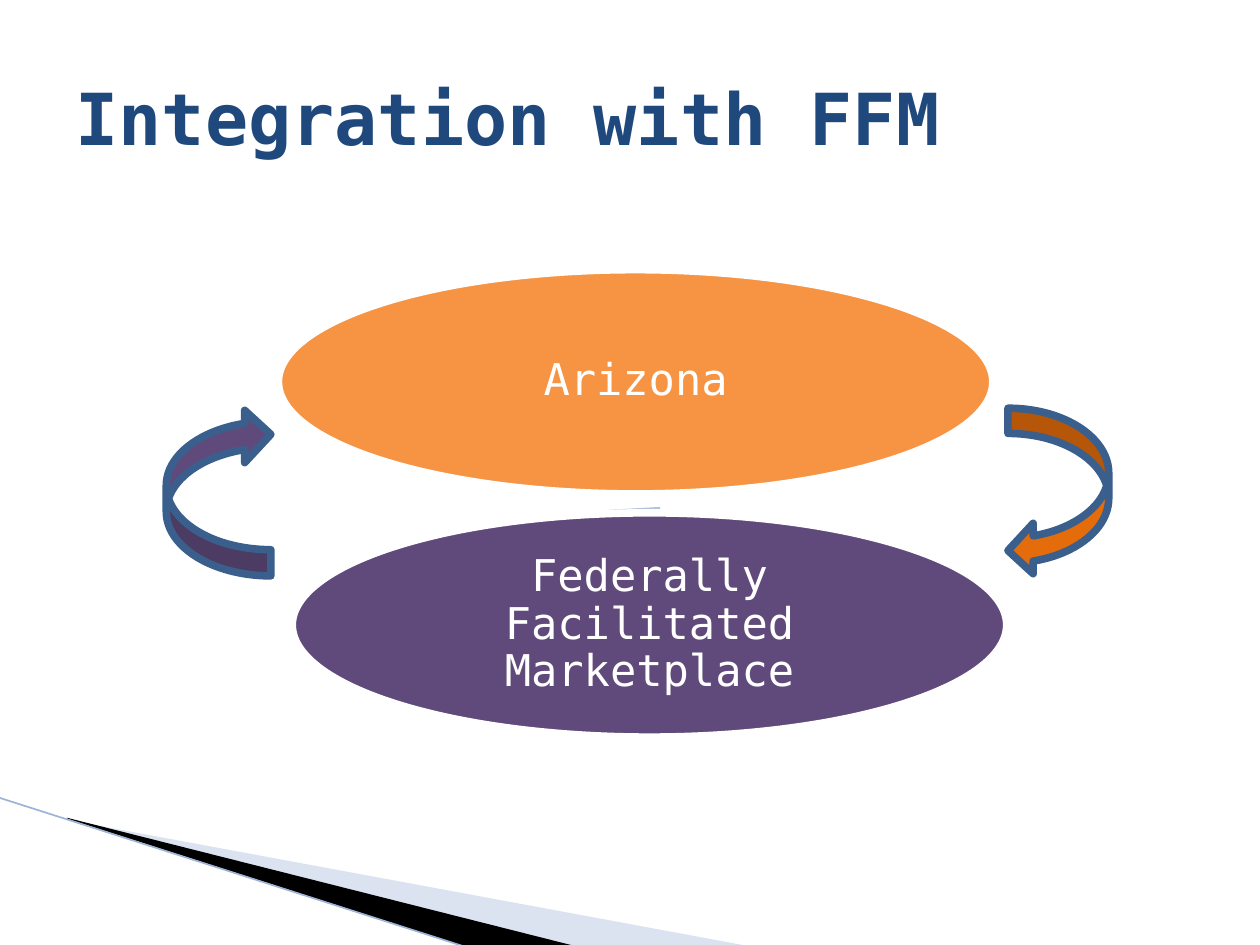
"""Build the slide showing the exchange between Arizona and the federal marketplace."""
from dataclasses import dataclass

from lxml import etree
from pptx import Presentation
from pptx.dml.color import RGBColor
from pptx.enum import shapes, text
from pptx.oxml import ns
from pptx.util import Inches, Pt

FONT = "DejaVu Sans Mono"
NAVY = RGBColor(0x1F, 0x49, 0x7D)
WHITE = RGBColor(0xFF, 0xFF, 0xFF)
BLACK = RGBColor(0x00, 0x00, 0x00)
ORANGE = RGBColor(0xF7, 0x94, 0x43)
DEEP_ORANGE = RGBColor(0xE4, 0x6C, 0x0A)
PURPLE = RGBColor(0x60, 0x4A, 0x7B)
OUTLINE = RGBColor(0x3A, 0x5F, 0x8C)
PALE_BLUE = RGBColor(0xA7, 0xB9, 0xDB)
LINK_BLUE = RGBColor(0xB3, 0xC1, 0xDB)
LINE_BLUE = RGBColor(0x9E, 0xB3, 0xD6)


@dataclass(frozen=True)
class Item:
    kind: shapes.MSO_SHAPE
    box: tuple[float, float, float, float]
    fill: RGBColor
    outline: RGBColor | None = None
    label: str = ""
    rotation: float = 0
    flips: tuple[str, ...] = ()
    adjustments: tuple[float, ...] = ()


@dataclass(frozen=True)
class Wedge:
    points: tuple[tuple[float, float], ...]
    fill: RGBColor
    opacity: int = 100


WEDGES = (
    Wedge(((0.55, 6.51), (5.95, 7.51), (4.56, 7.51), (0.55, 6.5)), PALE_BLUE, 40),
    Wedge(((0.53, 6.49), (4.57, 7.51), (3.72, 7.52), (0.54, 6.5)), BLACK),
)
ITEMS = (
    Item(shapes.MSO_SHAPE.OVAL, (2.21, 2.14, 5.67, 1.78), ORANGE, WHITE, "Arizona"),
    Item(shapes.MSO_SHAPE.RIGHT_ARROW, (5, 3.74, 0.08, 0.67), LINK_BLUE,
         rotation=266.8, flips=("flipH", "flipV"), adjustments=(0.6, 0.5)),
    Item(shapes.MSO_SHAPE.OVAL, (2.32, 4.07, 5.67, 1.78), PURPLE, WHITE,
         "Federally Facilitated Marketplace"),
    Item(shapes.MSO_SHAPE.CURVED_LEFT_ARROW, (8, 3.24, 0.8, 1.33), DEEP_ORANGE, OUTLINE),
    Item(shapes.MSO_SHAPE.CURVED_RIGHT_ARROW, (1.32, 3.24, 0.83, 1.33), PURPLE, OUTLINE,
         rotation=180, flips=("flipH",)),
)


def format_font(font, size: float, color: RGBColor, bold: bool = False) -> None:
    font.name, font.size, font.bold = FONT, Pt(size), bold
    font.color.rgb = color


def draw_wedge(slide, wedge: Wedge) -> None:
    start, *rest = [(Inches(x), Inches(y)) for x, y in wedge.points]
    builder = slide.shapes.build_freeform(*start)
    builder.add_line_segments(rest)
    shape = builder.convert_to_shape()
    shape.shadow.inherit = False
    shape.fill.solid()
    shape.fill.fore_color.rgb = wedge.fill
    shape.line.fill.background()
    if wedge.opacity < 100:
        color = shape.element.spPr.find(".//" + ns.qn("a:srgbClr"))
        etree.SubElement(color, ns.qn("a:alpha"), val=str(wedge.opacity * 1000))


def draw_edge(slide) -> None:
    line = slide.shapes.add_connector(
        shapes.MSO_CONNECTOR.STRAIGHT, Inches(-0.01), Inches(6.33), Inches(3.71), Inches(7.52))
    line.line.color.rgb = LINE_BLUE
    line.line.width = Pt(0.95)
    etree.SubElement(line.element.spPr, ns.qn("a:effectLst"))


def write_label(shape, label: str) -> None:
    frame = shape.text_frame
    frame.text = label
    frame.word_wrap = True
    frame.vertical_anchor = text.MSO_ANCHOR.MIDDLE
    frame.margin_left = frame.margin_right = Inches(0.1)
    frame.margin_top = frame.margin_bottom = Inches(0.1)
    paragraph = frame.paragraphs[0]
    paragraph.alignment = text.PP_ALIGN.CENTER
    paragraph.line_spacing = 0.9
    format_font(paragraph.runs[0].font, 25, WHITE)


def draw_item(slide, item: Item) -> None:
    shape = slide.shapes.add_shape(item.kind, *map(Inches, item.box))
    shape.shadow.inherit = False
    shape.rotation = item.rotation
    for flip in item.flips:
        shape.element.spPr.xfrm.set(flip, "1")
    for index, value in enumerate(item.adjustments):
        shape.adjustments[index] = value
    shape.fill.solid()
    shape.fill.fore_color.rgb = item.fill
    if item.outline is None:
        shape.line.fill.background()
    else:
        shape.line.color.rgb = item.outline
        shape.line.width = Pt(4.33)
    if item.label:
        write_label(shape, item.label)


def write_title(slide) -> None:
    title = slide.shapes.title
    title.left, title.top, title.width, title.height = map(Inches, (0.5, 0.3, 9, 1.25))
    frame = title.text_frame
    frame.text = "Integration with FFM"
    frame.vertical_anchor = text.MSO_ANCHOR.MIDDLE
    paragraph = frame.paragraphs[0]
    paragraph.alignment = text.PP_ALIGN.LEFT
    format_font(paragraph.runs[0].font, 41, NAVY, bold=True)


def main() -> None:
    presentation = Presentation()
    presentation.slide_width, presentation.slide_height = Inches(10), Inches(7.5)
    slide = presentation.slides.add_slide(presentation.slide_layouts[5])
    write_title(slide)
    for wedge in WEDGES:
        draw_wedge(slide, wedge)
    draw_edge(slide)
    for item in ITEMS:
        draw_item(slide, item)
    presentation.save("out.pptx")


if __name__ == "__main__":
    main()
